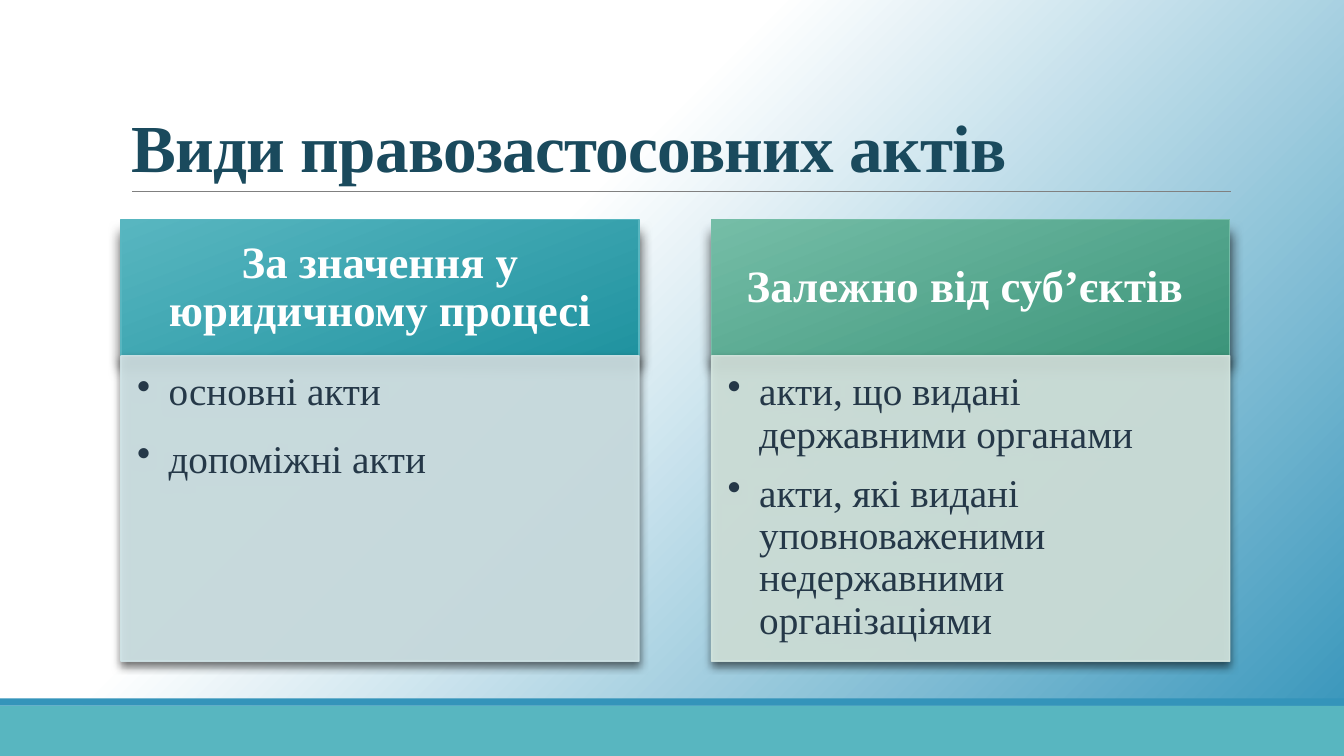
from lxml import etree
from pptx import Presentation
from pptx.dml.color import RGBColor
from pptx.enum.shapes import MSO_CONNECTOR, MSO_SHAPE
from pptx.enum.text import MSO_ANCHOR, MSO_AUTO_SIZE, PP_ALIGN
from pptx.oxml.ns import qn
from pptx.util import Pt

RECT = MSO_SHAPE.RECTANGLE
TOP, MIDDLE, BOTTOM = MSO_ANCHOR.TOP, MSO_ANCHOR.MIDDLE, MSO_ANCHOR.BOTTOM
LEFT, CENTER = PP_ALIGN.LEFT, PP_ALIGN.CENTER

WHITE = RGBColor(0xFF, 0xFF, 0xFF)
GRAY = RGBColor(0x80, 0x80, 0x80)
BLUE = RGBColor(0x34, 0x94, 0xBA)
TITLE_BLUE = RGBColor(0x1A, 0x4A, 0x5D)
BODY_BLUE = RGBColor(0x25, 0x38, 0x48)
TEAL = RGBColor(0x58, 0xB6, 0xC0)
DARK_TEAL = RGBColor(0x20, 0x93, 0xA0)
PALE_TEAL = RGBColor(0xD1, 0xE5, 0xE8)
GREEN = RGBColor(0x75, 0xBD, 0xA7)
DARK_GREEN = RGBColor(0x3C, 0x95, 0x7A)
PALE_GREEN = RGBColor(0xD6, 0xE8, 0xE1)

COLUMN_W, HEADER_Y, HEADER_H, BODY_H = 370.08, 156.96, 97.2, 218.16
COLUMNS = [
    (86.4, "За значення у юридичному процесі", ["основні акти", "допоміжні акти"],
     18, TEAL, DARK_TEAL, PALE_TEAL),
    (508.32, "Залежно від суб’єктів ",
     ["акти, що видані державними органами",
      "акти, які видані уповноваженими недержавними організаціями"],
     12, GREEN, DARK_GREEN, PALE_GREEN),
]


def write(sp, lines, size, color, bold=False, align=LEFT, anchor=TOP,
          insets=(7.2, 3.6, 7.2, 3.6), spacing=0.9, after=0, bullet=False, kern=None):
    """Fill the shape with one paragraph per line; insets run left, top, right, bottom."""
    tf = sp.text_frame
    tf.word_wrap = True
    tf.auto_size = MSO_AUTO_SIZE.NONE
    tf.vertical_anchor = anchor
    tf.margin_left, tf.margin_top, tf.margin_right, tf.margin_bottom = map(Pt, insets)
    for i, line in enumerate(lines):
        p = tf.add_paragraph() if i else tf.paragraphs[0]
        p.alignment, p.line_spacing = align, spacing
        p.space_before, p.space_after = Pt(0), Pt(after)
        if bullet:
            pPr = p._p.get_or_add_pPr()
            pPr.set("marL", str(Pt(22.5)))
            pPr.set("indent", str(-Pt(22.5)))
            etree.SubElement(pPr, qn("a:buChar"), char="•")
        r = p.add_run()
        r.text = line
        r.font.name, r.font.size, r.font.bold = "Times New Roman", Pt(size), bold
        r.font.color.rgb = color
        if kern is not None:
            r._r.get_or_add_rPr().set("spc", str(int(kern * 100)))


def add_rect(x, y, w, h, color, end_color=None, opacity=None, shadow=None):
    """Add a rectangle; shadow is (opacity %, blur, distance) and brings an outline."""
    sp = s.shapes.add_shape(RECT, Pt(x), Pt(y), Pt(w), Pt(h))
    sp.shadow.inherit = False
    if end_color is None:
        sp.fill.solid()
        sp.fill.fore_color.rgb = color
    else:
        sp.fill.gradient()
        sp.fill.gradient_angle = 291
        for stop, stop_color in zip(sp.fill.gradient_stops, (color, end_color)):
            stop.color.rgb = stop_color
    if shadow is None:
        sp.line.fill.background()
        return sp
    sp.line.color.rgb = color
    sp.line.width = Pt(1)
    spPr = sp._element.spPr
    if opacity:
        for clr in spPr.iter(qn("a:srgbClr")):
            etree.SubElement(clr, qn("a:alpha"), val=str(opacity * 1000))
    alpha, blur, distance = shadow
    outer = etree.SubElement(spPr.find(qn("a:effectLst")), qn("a:outerShdw"),
                             blurRad=str(Pt(blur)), dist=str(Pt(distance)),
                             dir="5400000", rotWithShape="0")
    black = etree.SubElement(outer, qn("a:srgbClr"), val="000000")
    etree.SubElement(black, qn("a:alpha"), val=str(alpha * 1000))
    return sp


prs = Presentation()
prs.slide_width, prs.slide_height = Pt(960), Pt(540)
s = prs.slides.add_slide(prs.slide_layouts[5])

bg = s.background.fill
bg.gradient()
bg.gradient_angle = 315
for stop, position, color in zip(bg.gradient_stops, (0.37, 1), (WHITE, BLUE)):
    stop.position = position
    stop.color.rgb = color

add_rect(0, 504, 960, 36, TEAL)
add_rect(0, 498.96, 960, 5.04, BLUE)

rule = s.shapes.add_connector(MSO_CONNECTOR.STRAIGHT, Pt(94.32), Pt(136.8), Pt(879.12), Pt(136.8))
rule.line.color.rgb = GRAY
rule.line.width = Pt(0.5)
etree.SubElement(rule._element.spPr, qn("a:effectLst"))

title = s.shapes.title
title.left, title.top, title.width, title.height = Pt(86.4), Pt(22.32), Pt(792), Pt(114.48)
write(title, ["Види правозастосовних актів"], 48, TITLE_BLUE, bold=True,
      anchor=BOTTOM, spacing=0.85, kern=-0.5)

for x, heading, items, after, color, dark, pale in COLUMNS:
    header = add_rect(x, HEADER_Y, COLUMN_W, HEADER_H, color, end_color=dark, shadow=(70, 9, 9))
    write(header, [heading], 32, WHITE, bold=True, align=CENTER, anchor=MIDDLE,
          insets=(18, 10.08, 18, 10.08))
    body = add_rect(x, HEADER_Y + HEADER_H, COLUMN_W, BODY_H, pale, opacity=90, shadow=(60, 6, 3))
    write(body, items, 28, BODY_BLUE, insets=(11.52, 11.52, 15.84, 17.28),
          after=after, bullet=True)

prs.save("out.pptx")
